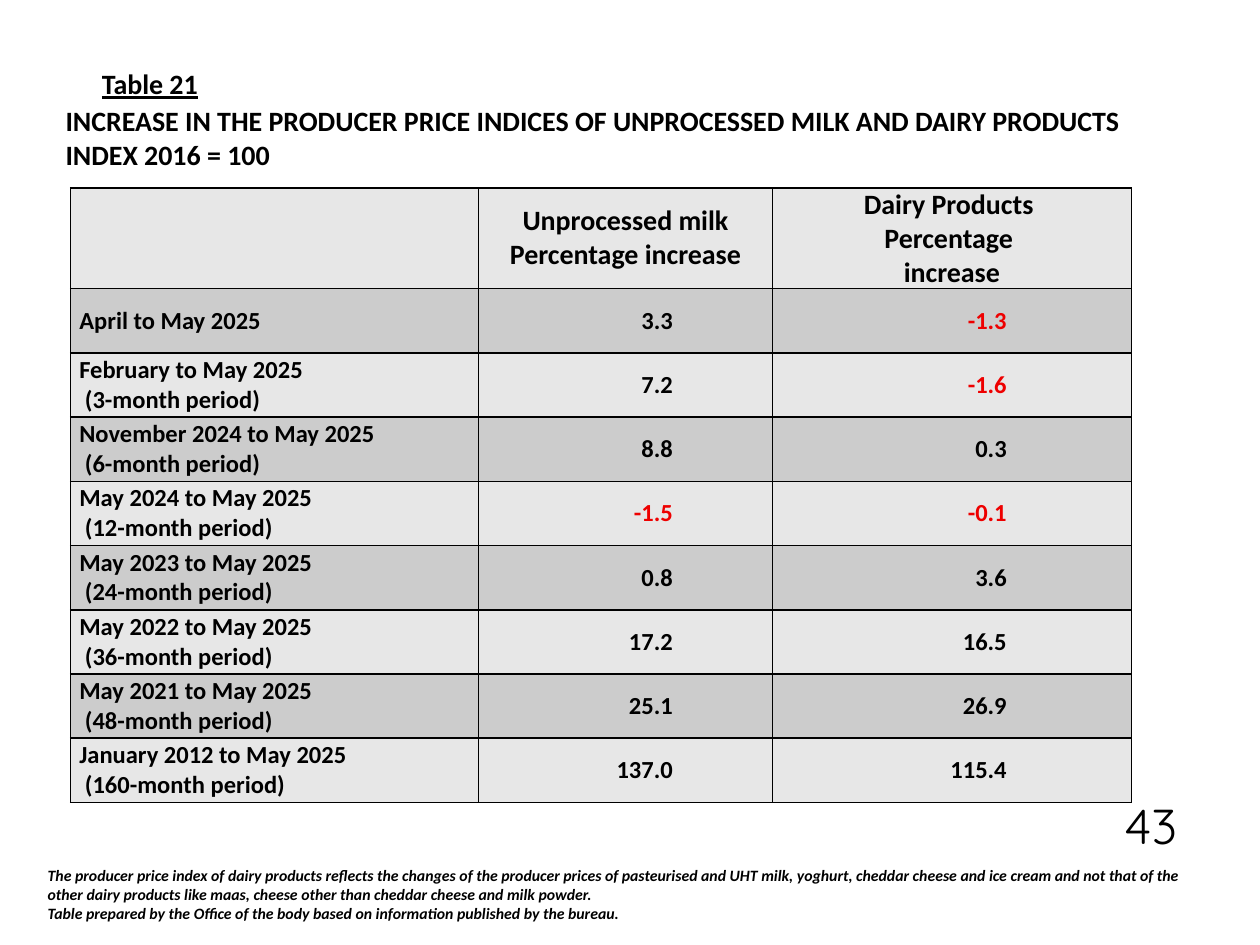
from dataclasses import dataclass

from lxml.etree import SubElement
from pptx import Presentation
from pptx.dml.color import RGBColor
from pptx.enum.text import MSO_ANCHOR, MSO_AUTO_SIZE, PP_ALIGN
from pptx.oxml.ns import qn
from pptx.util import Inches, Pt


@dataclass(frozen=True)
class Theme:
    """Colours, fonts and type sizes of the slide."""
    ink: str = "000000"
    negative: str = "EE0000"
    light_band: str = "E7E7E7"
    dark_band: str = "CCCCCC"
    body_font: str = "Calibri"
    number_font: str = "Quicksand"
    heading_size: int = 16
    row_size: int = 14
    note_size: int = 9
    number_size: int = 28
    border_width: float = 1


THEME = Theme()
COLUMN_WIDTHS = (3.24, 2.33, 2.85)
HEADER_HEIGHT, ROW_HEIGHT = 0.78, 0.51
CELL_INSET = 0.07
VALUE_INSETS = (0.79, 0.99)
HEADINGS = (
    (),
    ("Unprocessed milk Percentage increase",),
    ("Dairy Products ", "Percentage ", "increase"),
)
INCREASES = (
    ("April to May 2025", None, "3.3", "-1.3"),
    ("February to May 2025", 3, "7.2", "-1.6"),
    ("November 2024 to May 2025", 6, "8.8", "0.3"),
    ("May 2024 to May 2025", 12, "-1.5", "-0.1"),
    ("May 2023 to May 2025", 24, "0.8", "3.6"),
    ("May 2022 to May 2025", 36, "17.2", "16.5"),
    ("May 2021 to May 2025", 48, "25.1", "26.9"),
    ("January 2012 to May 2025", 160, "137.0", "115.4"),
)
TITLE = (
    "INCREASE IN THE PRODUCER PRICE INDICES OF UNPROCESSED MILK AND DAIRY PRODUCTS",
    "INDEX 2016 = 100",
)
NOTES = (
    "The producer price index of dairy products reflects the changes of the producer "
    "prices of pasteurised and UHT milk, yoghurt, cheddar cheese and ice cream and not "
    "that of the other dairy products like maas, cheese other than cheddar cheese and "
    "milk powder.",
    "Table prepared by the Office of the body based on information published by the bureau.",
)


def write_lines(frame, lines, size, align=PP_ALIGN.LEFT, color=THEME.ink,
                font_name=THEME.body_font, bold=True, italic=False, underline=False):
    """Write each line as a paragraph of one formatted run."""
    for index, line in enumerate(lines):
        paragraph = frame.add_paragraph() if index else frame.paragraphs[0]
        paragraph.alignment = align
        run = paragraph.add_run()
        run.text = line
        font = run.font
        font.name, font.size = font_name, Pt(size)
        font.bold, font.italic, font.underline = bold, italic, underline
        font.color.rgb = RGBColor.from_string(color)


def add_caption(slide, box, lines, size, anchor=MSO_ANCHOR.MIDDLE, inset=0.1,
                grow=True, **style):
    """Place a wrapped text box in the given box."""
    frame = slide.shapes.add_textbox(*map(Inches, box)).text_frame
    frame.word_wrap = True
    frame.auto_size = MSO_AUTO_SIZE.SHAPE_TO_FIT_TEXT if grow else MSO_AUTO_SIZE.NONE
    frame.vertical_anchor = anchor
    frame.margin_left = Inches(inset)
    write_lines(frame, lines, size, **style)


def style_cell(cell, band, right_inset=CELL_INSET, anchor=MSO_ANCHOR.MIDDLE):
    """Give a cell its borders, band colour, insets and anchor."""
    properties = cell._tc.get_or_add_tcPr()
    for side in ("a:lnL", "a:lnR", "a:lnT", "a:lnB"):
        border = SubElement(properties, qn(side), w=str(Pt(THEME.border_width)))
        fill = SubElement(border, qn("a:solidFill"))
        SubElement(fill, qn("a:srgbClr"), val=THEME.ink)
    cell.fill.solid()
    cell.fill.fore_color.rgb = RGBColor.from_string(band)
    cell.margin_left, cell.margin_right = Inches(CELL_INSET), Inches(right_inset)
    cell.margin_top = cell.margin_bottom = 0
    cell.vertical_anchor = anchor


def add_increase_table(slide, box):
    """Place the table of price increases in the given box."""
    table = slide.shapes.add_table(
        len(INCREASES) + 1, len(COLUMN_WIDTHS), *map(Inches, box)).table
    for column, width in zip(table.columns, COLUMN_WIDTHS):
        column.width = Inches(width)
    for index, row in enumerate(table.rows):
        row.height = Inches(ROW_HEIGHT if index else HEADER_HEIGHT)

    for cell, heading in zip(table.rows[0].cells, HEADINGS):
        anchor = MSO_ANCHOR.TOP if len(heading) > 1 else MSO_ANCHOR.MIDDLE
        style_cell(cell, THEME.light_band, anchor=anchor)
        write_lines(cell.text_frame, heading, THEME.heading_size, PP_ALIGN.CENTER)

    for index, (period, months, *values) in enumerate(INCREASES):
        band = THEME.light_band if index % 2 else THEME.dark_band
        period_cell, *value_cells = table.rows[index + 1].cells
        style_cell(period_cell, band)
        label = [period] + ([f" ({months}-month period)"] if months else [])
        write_lines(period_cell.text_frame, label, THEME.row_size)
        for cell, value, inset in zip(value_cells, values, VALUE_INSETS):
            style_cell(cell, band, inset)
            color = THEME.negative if value.startswith("-") else THEME.ink
            write_lines(cell.text_frame, [value], THEME.row_size, PP_ALIGN.RIGHT, color)


def main():
    """Build the slide and save it."""
    presentation = Presentation()
    presentation.slide_width, presentation.slide_height = Inches(10), Inches(7.5)
    slide = presentation.slides.add_slide(presentation.slide_layouts[6])
    add_caption(slide, (0.28, 6.82, 9.42, 0.56), NOTES, THEME.note_size, italic=True)
    add_caption(slide, (0.71, 0.48, 1.41, 0.37), ["Table 21"], THEME.heading_size,
                MSO_ANCHOR.TOP, underline=True)
    add_caption(slide, (0.14, 0.77, 9.72, 0.64), TITLE, THEME.heading_size, inset=0.38)
    add_caption(slide, (8.5, 6.1, 0.94, 0.73), ["43"], THEME.number_size,
                MSO_ANCHOR.BOTTOM, grow=False, align=PP_ALIGN.RIGHT,
                font_name=THEME.number_font, bold=False)
    add_increase_table(slide, (0.56, 1.49, 8.42, 4.88))
    presentation.save("out.pptx")


if __name__ == "__main__":
    main()
